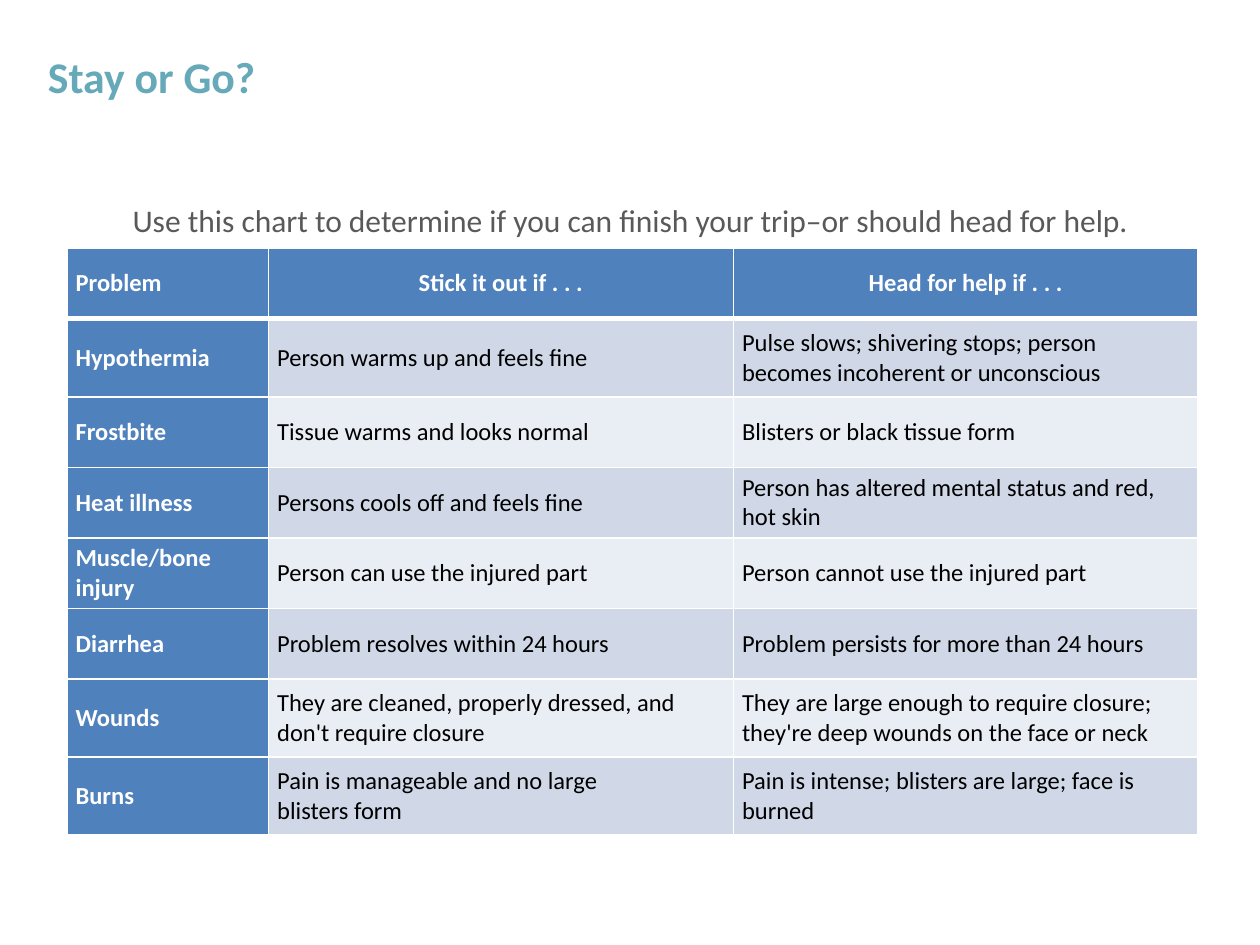
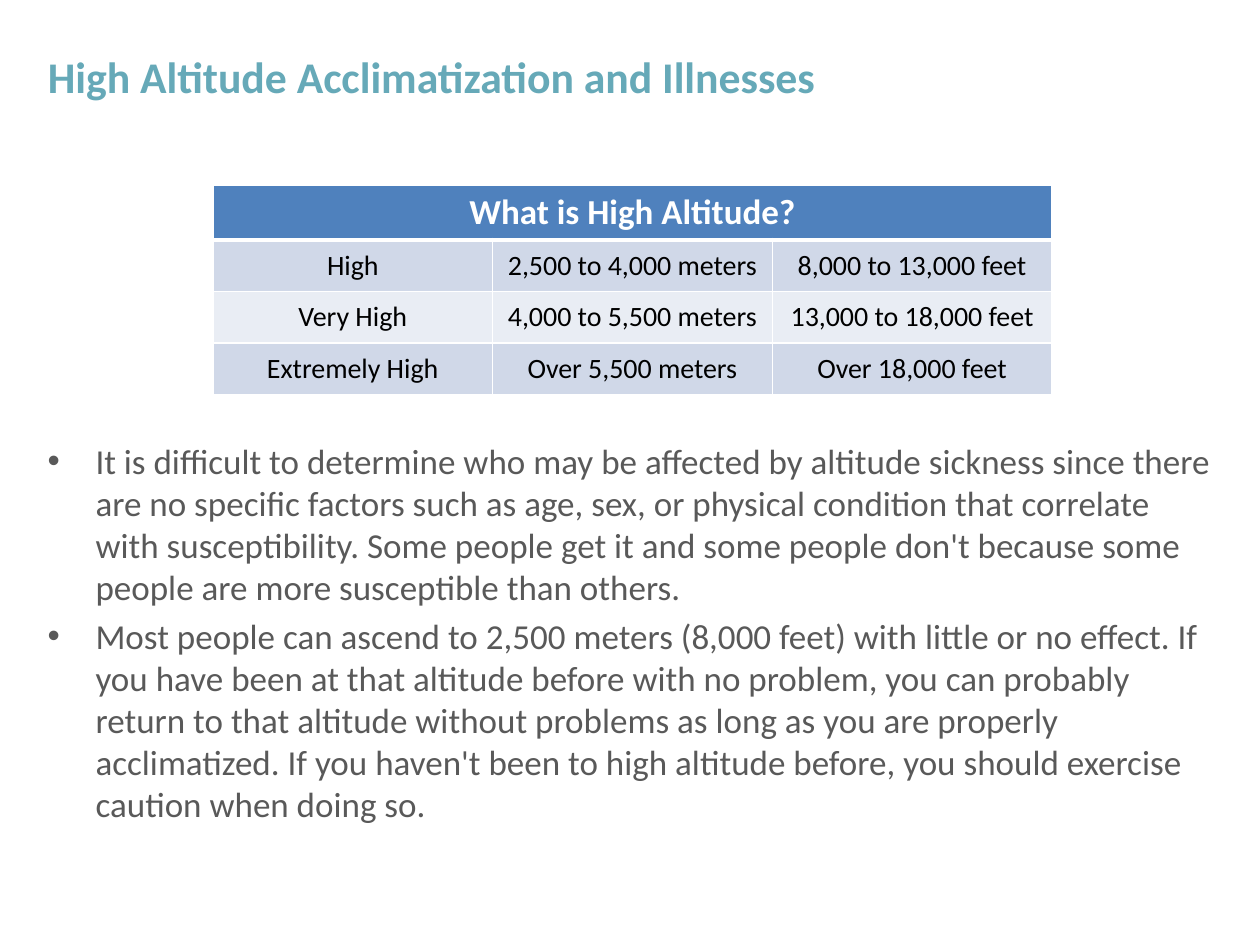
from dataclasses import dataclass

from lxml.etree import SubElement
from pptx import Presentation
from pptx.dml.color import RGBColor
from pptx.enum.text import MSO_ANCHOR, MSO_AUTO_SIZE, PP_ALIGN
from pptx.oxml.ns import qn
from pptx.util import Inches, Pt

FONT = "Calibri"
TEAL = RGBColor(0x66, 0xA9, 0xB8)
GREY = RGBColor(0x59, 0x59, 0x59)
BLUE = RGBColor(0x4F, 0x81, 0xBD)
WHITE = RGBColor(0xFF, 0xFF, 0xFF)
BLACK = RGBColor(0, 0, 0)
BANDS = (RGBColor(0xD0, 0xD8, 0xE8), RGBColor(0xE9, 0xED, 0xF4))
LEFT, MID = PP_ALIGN.LEFT, PP_ALIGN.CENTER
EDGE, WIDE = 0.28, 9.45

TRIAGE = (
    ("Problem", "Stick it out if . . .", "Head for help if . . ."),
    ("Hypothermia", "Person warms up and feels fine",
     "Pulse slows; shivering stops; person becomes incoherent or unconscious"),
    ("Frostbite", "Tissue warms and looks normal", "Blisters or black tissue form"),
    ("Heat illness", "Persons cools off and feels fine",
     "Person has altered mental status and red, hot skin"),
    ("Muscle/bone injury", "Person can use the injured part",
     "Person cannot use the injured part"),
    ("Diarrhea", "Problem resolves within 24 hours",
     "Problem persists for more than 24 hours"),
    ("Wounds", "They are cleaned, properly dressed, and don't require closure",
     "They are large enough to require closure; they're deep wounds on the face or neck"),
    ("Burns", "Pain is manageable and no large\nblisters form",
     "Pain is intense; blisters are large; face is burned"),
)
HEIGHTS = (
    ("What is High Altitude?", "", ""),
    ("High", "2,500 to 4,000 meters", "8,000 to 13,000 feet"),
    ("Very High", "4,000 to 5,500 meters", "13,000 to 18,000 feet"),
    ("Extremely High", "Over 5,500 meters", "Over 18,000 feet"),
)
ADVICE = (
    "It is difficult to determine who may be affected by altitude sickness since "
    "there are no specific factors such as age, sex, or physical condition that "
    "correlate with susceptibility. Some people get it and some people don't "
    "because some people are more susceptible than others.",
    "Most people can ascend to 2,500 meters (8,000 feet) with little or no effect. "
    "If you have been at that altitude before with no problem, you can probably "
    "return to that altitude without problems as long as you are properly "
    "acclimatized. If you haven't been to high altitude before, you should "
    "exercise caution when doing so.",
)


@dataclass(frozen=True)
class Grid:
    left: float
    top: float
    cols: tuple[float, ...]
    rows: tuple[float, ...]
    cells: tuple[tuple[str, ...], ...]
    size: int
    head: int
    align: PP_ALIGN = LEFT
    side: bool = False    # first column styled like the header
    banner: bool = False  # header is one merged cell


def write(para, text: str, size: int, color: RGBColor, bold: bool = False,
          align: PP_ALIGN = LEFT) -> None:
    para.alignment = align
    for num, line in enumerate(text.split("\n")):
        if num:
            para.add_line_break()
        run = para.add_run()
        run.text = line
        font = run.font
        font.name, font.size, font.bold = FONT, Pt(size), bold
        font.color.rgb = color


def start(deck, title: str):
    """Add a slide with the shared title style."""
    slide = deck.slides.add_slide(deck.slide_layouts[5])
    box = slide.shapes.title
    box.left, box.top = Inches(EDGE), Inches(0.17)
    box.width, box.height = Inches(9.21), Inches(0.87)
    frame = box.text_frame
    frame.auto_size = MSO_AUTO_SIZE.NONE
    frame.vertical_anchor = MSO_ANCHOR.MIDDLE
    write(frame.paragraphs[0], title, 25, TEAL, True)
    return slide


def add_box(slide, top: float, height: float):
    box = slide.shapes.add_textbox(
        Inches(EDGE), Inches(top), Inches(WIDE), Inches(height))
    box.text_frame.word_wrap = True
    return box.text_frame


def add_bullet(para) -> None:
    props = para._p.get_or_add_pPr()
    props.set("marL", str(Inches(0.38)))
    props.set("indent", str(-Inches(0.38)))
    SubElement(props, qn("a:buFont"), typeface="Arial")
    SubElement(props, qn("a:buChar"), char="•")


def add_edges(cell, row: int) -> None:
    """Draw white borders, thick between header and body."""
    props = cell._tc.get_or_add_tcPr()
    thick = {0: "lnB", 1: "lnT"}.get(row)
    for tag in ("lnL", "lnR", "lnT", "lnB"):
        width = Pt(3 if tag == thick else 1)
        line = SubElement(props, qn(f"a:{tag}"), w=str(width))
        fill = SubElement(line, qn("a:solidFill"))
        SubElement(fill, qn("a:srgbClr"), val=str(WHITE))


def add_grid(slide, grid: Grid) -> None:
    table = slide.shapes.add_table(
        len(grid.rows), len(grid.cols), Inches(grid.left), Inches(grid.top),
        Inches(sum(grid.cols)), Inches(sum(grid.rows))).table
    for col, width in zip(table.columns, grid.cols):
        col.width = Inches(width)
    for row, height in zip(table.rows, grid.rows):
        row.height = Inches(height)
    if grid.banner:
        table.cell(0, 0).merge(table.cell(0, len(grid.cols) - 1))
    for r, texts in enumerate(grid.cells):
        for c, text in enumerate(texts):
            cell = table.cell(r, c)
            lead = r == 0 or (grid.side and c == 0)
            add_edges(cell, r)
            cell.fill.solid()
            cell.fill.fore_color.rgb = BLUE if lead else BANDS[(r - 1) % 2]
            if cell.is_spanned:
                continue
            if not (grid.banner and r == 0):
                cell.vertical_anchor = MSO_ANCHOR.MIDDLE
                cell.margin_left = cell.margin_right = Inches(0.07)
                cell.margin_top = cell.margin_bottom = 0
            align = MID if r == 0 and (c or grid.banner) else grid.align
            write(cell.text_frame.paragraphs[0], text,
                  grid.head if r == 0 else grid.size,
                  WHITE if lead else BLACK, lead, align)


def add_triage(deck) -> None:
    slide = start(deck, "Stay or Go?")
    rows = (0.56, 0.62) + (0.56,) * 4 + (0.62,) * 2
    add_grid(slide, Grid(0.53, 1.97, (1.6, 3.69, 3.69), rows, TRIAGE,
                         size=14, head=14, side=True))
    frame = add_box(slide, 1.55, 0.4)
    write(frame.paragraphs[0],
          "Use this chart to determine if you can finish your trip–or should "
          "head for help.", 18, GREY, align=MID)


def add_height(deck) -> None:
    slide = start(deck, "High Altitude Acclimatization and Illnesses")
    frame = add_box(slide, 3.44, 3.21)
    for num, text in enumerate(ADVICE):
        para = frame.add_paragraph() if num else frame.paragraphs[0]
        if num:
            para.space_before = Pt(4)
        add_bullet(para)
        write(para, text, 20, GREY)
    add_grid(slide, Grid(1.69, 1.47, (2.22,) * 3, (0.41,) * 4, HEIGHTS,
                         size=16, head=20, align=MID, banner=True))


def main() -> None:
    deck = Presentation()
    deck.slide_width, deck.slide_height = Inches(10), Inches(7.5)
    add_triage(deck)
    add_height(deck)
    deck.save("out.pptx")


if __name__ == "__main__":
    main()
